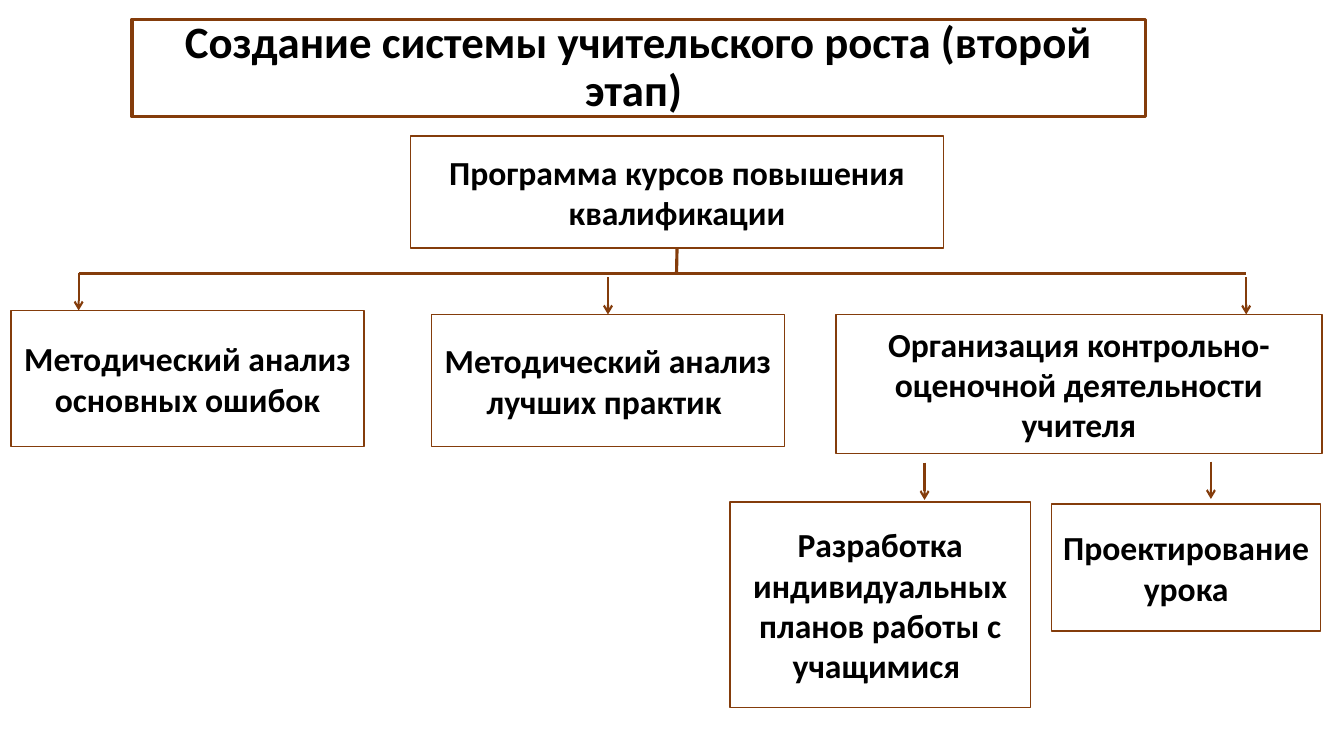
from lxml import etree
from pptx import Presentation
from pptx.dml.color import RGBColor
from pptx.enum.shapes import MSO_CONNECTOR, MSO_SHAPE
from pptx.enum.text import MSO_ANCHOR, MSO_AUTO_SIZE, PP_ALIGN
from pptx.oxml.ns import qn
from pptx.util import Inches, Pt

BROWN = RGBColor(0x84, 0x3C, 0x0B)
WHITE = RGBColor(0xFF, 0xFF, 0xFF)
BLACK = RGBColor(0, 0, 0)
RECT = MSO_SHAPE.RECTANGLE
STRAIGHT = MSO_CONNECTOR.STRAIGHT
MIDDLE = MSO_ANCHOR.MIDDLE
CENTER = PP_ALIGN.CENTER
NO_AUTOFIT = MSO_AUTO_SIZE.NONE
TOP, BOTTOM = 0, 2


def write(sp, text, size=24, spacing=1.0, border=1):
    """Put bold centred text in a shape and outline it."""
    sp.line.color.rgb = BROWN
    sp.line.width = Pt(border)
    tf = sp.text_frame
    tf.word_wrap = True
    tf.auto_size = NO_AUTOFIT
    tf.vertical_anchor = MIDDLE
    p = tf.paragraphs[0]
    p.alignment = CENTER
    p.line_spacing = spacing
    r = p.add_run()
    r.text = text
    r.font.name = "Calibri"
    r.font.size = Pt(size)
    r.font.bold = True
    r.font.color.rgb = BLACK


def connect(x1, y1, x2, y2, width=1.5, arrow=True):
    """Draw a straight line, with an open arrowhead at its end if asked."""
    line = s.shapes.add_connector(STRAIGHT, Inches(x1), Inches(y1), Inches(x2), Inches(y2))
    line.line.color.rgb = BROWN
    line.line.width = Pt(width)
    if arrow:
        etree.SubElement(line.line._get_or_add_ln(), qn("a:tailEnd"), type="arrow")
    etree.SubElement(line._element.spPr, qn("a:effectLst"))
    return line


prs = Presentation()
prs.slide_width = Inches(13.33)
prs.slide_height = Inches(7.5)
s = prs.slides.add_slide(prs.slide_layouts[5])

# Title
title = s.shapes.title
title.left, title.top = Inches(1.31), Inches(0.19)
title.width, title.height = Inches(10.05), Inches(0.97)
write(title, "Создание системы учительского роста (второй этап) ",
      size=32, spacing=0.9, border=2.25)

# Boxes of the scheme
boxes = {}
for name, text, x, y, w, h in [
    ("program", "Программа курсов повышения квалификации", 4.07, 1.35, 5.29, 1.11),
    ("errors", "Методический анализ основных ошибок", 0.11, 3.08, 3.5, 1.35),
    ("practices", "Методический анализ лучших практик ", 4.28, 3.12, 3.5, 1.31),
    ("control", "Организация контрольно-оценочной деятельности учителя", 8.29, 3.12, 4.82, 1.38),
    ("lesson", "Проектирование урока", 10.43, 5, 2.67, 1.26),
    ("plans", "Разработка индивидуальных планов работы с учащимися ", 7.24, 4.98, 2.98, 2.04),
]:
    sp = s.shapes.add_shape(RECT, Inches(x), Inches(y), Inches(w), Inches(h))
    sp.shadow.inherit = False
    sp.fill.solid()
    sp.fill.fore_color.rgb = WHITE
    write(sp, text)
    boxes[name] = sp

# Stem and crossbar
stem = connect(6.71, 2.46, 6.71, 2.71, width=2.25, arrow=False)
stem.begin_connect(boxes["program"], BOTTOM)
connect(0.78, 2.71, 12.36, 2.71, width=2.25, arrow=False)

# Arrows down to the boxes
for x, y in [(0.78, 2.71), (12.36, 2.75), (9.17, 4.59), (12.01, 4.58)]:
    connect(x, y, x, y + 0.37)
middle = connect(6.03, 2.75, 6.03, 3.12)
middle.end_connect(boxes["practices"], TOP)

prs.save("out.pptx")
